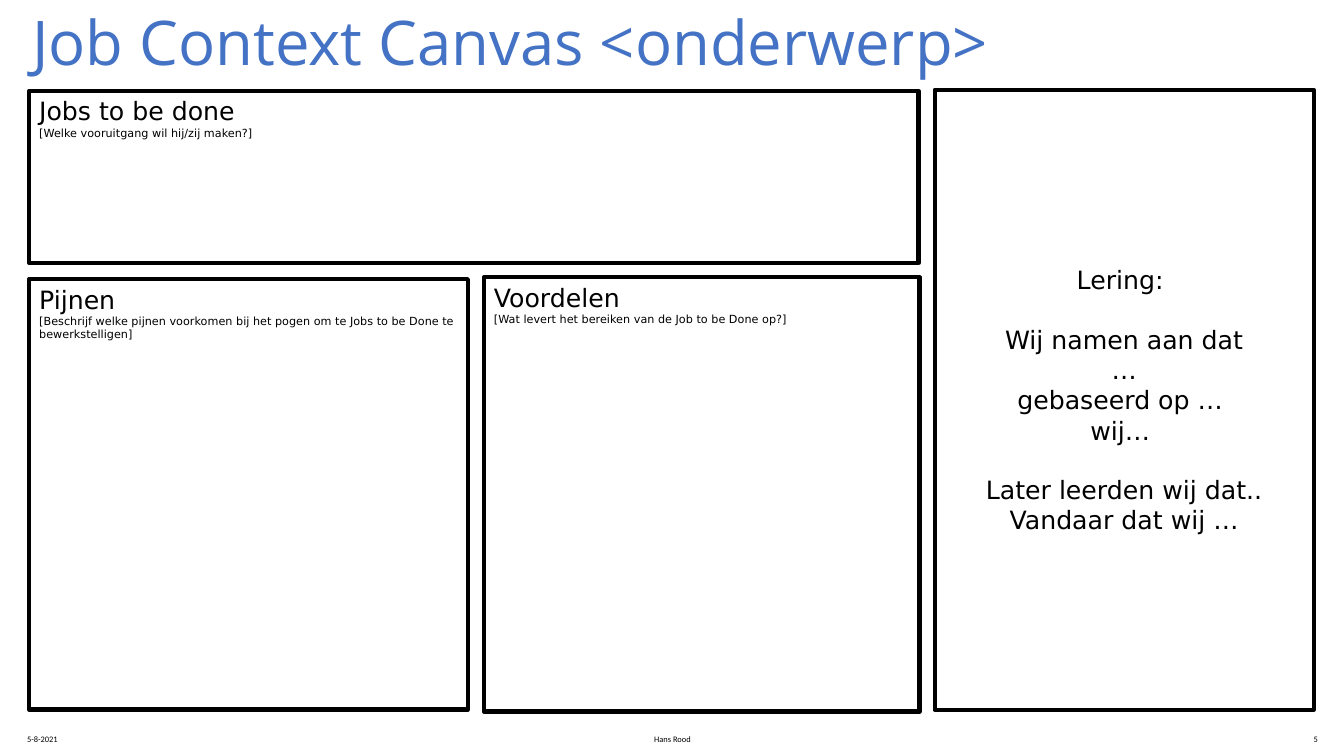
from dataclasses import dataclass

from pptx import Presentation
from pptx.dml.color import RGBColor
from pptx.enum.shapes import MSO_SHAPE
from pptx.enum.text import MSO_ANCHOR, PP_ALIGN
from pptx.util import Inches, Pt

RECT = MSO_SHAPE.RECTANGLE
TOP, MIDDLE = MSO_ANCHOR.TOP, MSO_ANCHOR.MIDDLE
LEFT, CENTER, RIGHT = PP_ALIGN.LEFT, PP_ALIGN.CENTER, PP_ALIGN.RIGHT


@dataclass(frozen=True)
class Theme:
    accent: RGBColor = RGBColor(0x44, 0x72, 0xC4)
    ink: RGBColor = RGBColor(0, 0, 0)
    title_font: str = "Open Sans"
    body_font: str = "DejaVu Sans"
    footer_font: str = "Calibri"
    title: int = 44
    heading: int = 18
    hint: int = 8
    footer: int = 6
    border: int = 3
    gap: int = 21


theme = Theme()


def add_text(tf, text, first=False, font=theme.body_font, size=theme.heading,
             color=theme.ink, align=LEFT, before=0, spacing=1.0):
    p = tf.paragraphs[0] if first else tf.add_paragraph()
    p.alignment = align
    p.space_before = Pt(before)
    p.line_spacing = spacing
    r = p.add_run()
    r.text = text
    r.font.name, r.font.size = font, Pt(size)
    r.font.color.rgb = color


def add_frame(s, box, anchor, bordered=False, inset=(0.1, 0.05)):
    box = [Inches(v) for v in box]
    if bordered:
        sp = s.shapes.add_shape(RECT, *box)
        sp.shadow.inherit = False
        sp.fill.background()
        sp.line.color.rgb = theme.ink
        sp.line.width = Pt(theme.border)
    else:
        sp = s.shapes.add_textbox(*box)
    tf = sp.text_frame
    tf.word_wrap = True
    tf.vertical_anchor = anchor
    tf.margin_left = tf.margin_right = Inches(inset[0])
    tf.margin_top = tf.margin_bottom = Inches(inset[1])
    return tf


prs = Presentation()
prs.slide_width, prs.slide_height = Inches(13.33), Inches(7.5)
s = prs.slides.add_slide(prs.slide_layouts[6])

# Title
tf = add_frame(s, (0.19, 0.03, 11.09, 0.84), MIDDLE, inset=(0.13, 0.13))
add_text(tf, "Job Context Canvas <onderwerp>", first=True, font=theme.title_font,
         size=theme.title, color=theme.accent, spacing=0.9)

# Canvas panels with heading and hint
panels = [
    ((4.8, 2.75, 4.32, 4.31), "Voordelen",
     "[Wat levert het bereiken van de Job to be Done op?]"),
    ((0.29, 2.77, 4.35, 4.27), "Pijnen",
     "[Beschrijf welke pijnen voorkomen bij het pogen om te Jobs to be Done te bewerkstelligen]"),
    ((0.29, 0.9, 8.82, 1.71), "Jobs to be done",
     "[Welke vooruitgang wil hij/zij maken?]"),
]
for box, heading, hint in panels:
    tf = add_frame(s, box, TOP, bordered=True)
    add_text(tf, heading, first=True)
    add_text(tf, hint, size=theme.hint)

# Learning panel: a gap opens each new group of lines
learning = [
    ["Lering: "],
    ["Wij namen aan dat", "…", "gebaseerd op … ", "wij… "],
    ["Later leerden wij dat..", "Vandaar dat wij …"],
]
tf = add_frame(s, (9.27, 0.89, 3.76, 6.15), MIDDLE, bordered=True)
for g, group in enumerate(learning):
    for i, line in enumerate(group):
        add_text(tf, line, first=g == i == 0, align=CENTER,
                 before=theme.gap if g and i == 0 else 0)

# Footer: date, author, slide number
footers = [
    (0.17, 3, "5-8-2021", LEFT),
    (10.17, 3, "5", RIGHT),
    (4.42, 4.5, "Hans Rood", CENTER),
]
for x, width, text, align in footers:
    tf = add_frame(s, (x, 7.23, width, 0.21), MIDDLE)
    add_text(tf, text, first=True, font=theme.footer_font, size=theme.footer, align=align)

prs.save("out.pptx")
